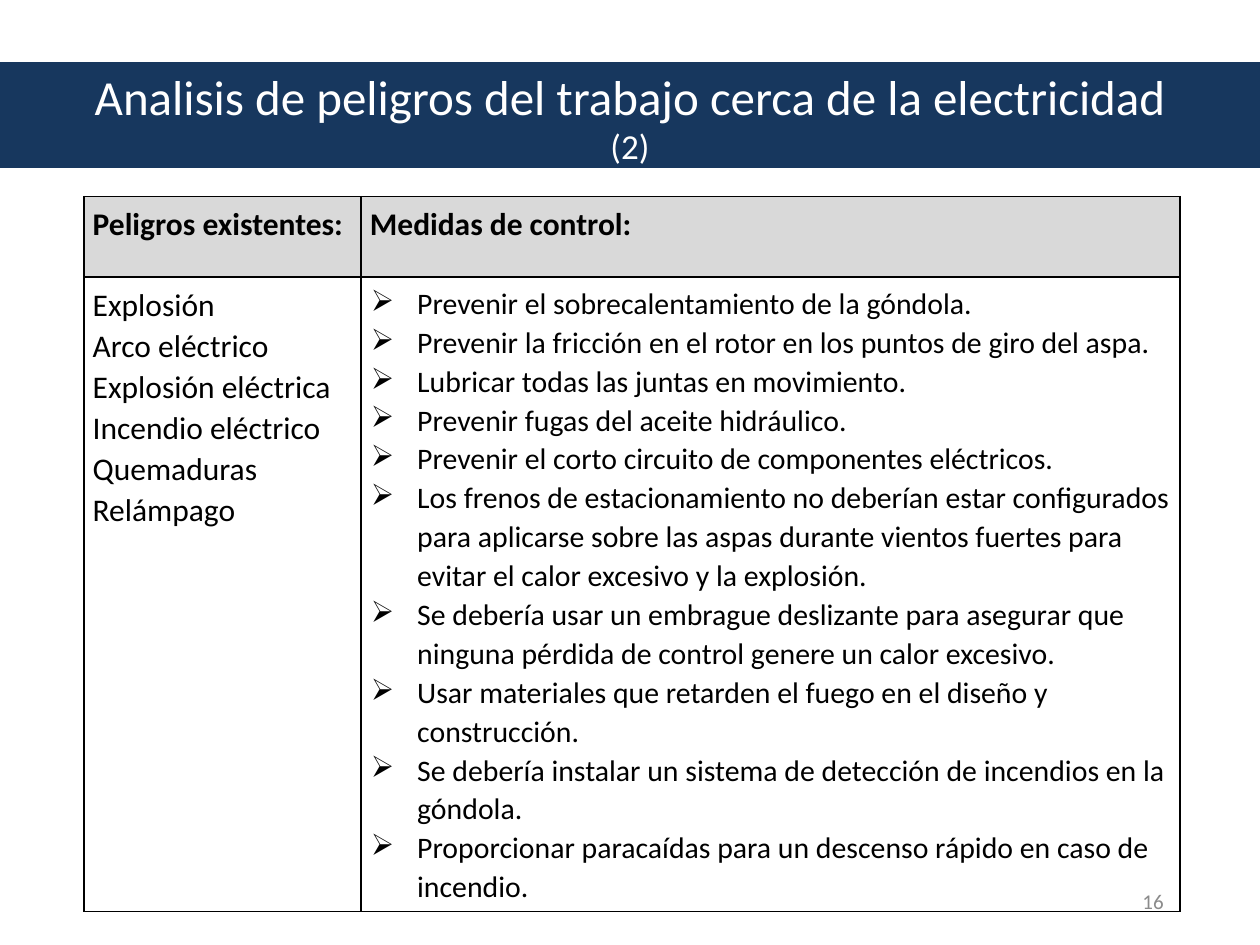
import pptx
import pptx.util
import pptx.dml.color
import pptx.enum.shapes
import pptx.enum.text
import pptx.oxml
import pptx.oxml.ns

Pt = pptx.util.Pt
ALIGN = pptx.enum.text.PP_ALIGN
COLORS = {"navy": "17375E", "white": "FFFFFF", "black": "000000", "header": "D9D9D9", "number": "8B8B8B"}
HAZARDS = ["Explosión", "Arco eléctrico", "Explosión eléctrica", "Incendio eléctrico", "Quemaduras", "Relámpago"]
CONTROLS = [
    "Prevenir el sobrecalentamiento de la góndola.",
    "Prevenir la fricción en el rotor en los puntos de giro del aspa.",
    "Lubricar todas las juntas en movimiento.",
    "Prevenir fugas del aceite hidráulico.",
    "Prevenir el corto circuito de componentes eléctricos.",
    "Los frenos de estacionamiento no deberían estar configurados para aplicarse sobre las aspas "
    "durante vientos fuertes para evitar el calor excesivo y la explosión.",
    "Se debería usar un embrague deslizante para asegurar que ninguna pérdida de control genere un calor excesivo.",
    "Usar materiales que retarden el fuego en el diseño y construcción.",
    "Se debería instalar un sistema de detección de incendios en la góndola.",
    "Proporcionar paracaídas para un descenso rápido en caso de incendio.",
]


class SlideBuilder:
    """Draw styled elements on one slide, with lengths in points."""

    def __init__(self, s, font="Calibri"):
        self.s = s
        self.font = font

    def rgb(self, color):
        return pptx.dml.color.RGBColor.from_string(COLORS[color])

    def style(self, r, size, color="black", bold=False):
        r.font.name = self.font
        r.font.size = Pt(size)
        r.font.bold = bold
        r.font.color.rgb = self.rgb(color)

    def xml(self, tag, body="", attrs=""):
        ns = pptx.oxml.ns.nsdecls("a")
        return pptx.oxml.parse_xml(f"<a:{tag} {ns} {attrs}>{body}</a:{tag}>")

    def band(self, x, y, w, h, color):
        sp = self.s.shapes.add_shape(pptx.enum.shapes.MSO_SHAPE.RECTANGLE, Pt(x), Pt(y), Pt(w), Pt(h))
        sp.shadow.inherit = False
        sp.fill.solid()
        sp.fill.fore_color.rgb = self.rgb(color)
        sp.line.color.rgb = self.rgb(color)
        sp.line.width = Pt(0.75)

    def text(self, x, y, w, h, parts, color, align):
        tf = self.s.shapes.add_textbox(Pt(x), Pt(y), Pt(w), Pt(h)).text_frame
        tf.word_wrap = True
        tf.vertical_anchor = pptx.enum.text.MSO_ANCHOR.MIDDLE
        p = tf.paragraphs[0]
        p.alignment = align
        for words, size in parts:
            r = p.add_run()
            r.text = words
            self.style(r, size, color)

    def bullet(self, p):
        pPr = p._p.get_or_add_pPr()
        pPr.set("marL", str(Pt(27)))
        pPr.set("indent", str(-Pt(26.5)))
        pPr.append(self.xml("buClr", f'<a:srgbClr val="{COLORS["black"]}"/>'))
        pPr.append(self.xml("buChar", attrs='char="➢"'))

    def cell(self, cell, lines, size, fill=None, bold=False, bullets=False):
        cell.margin_left = cell.margin_right = Pt(5)
        cell.margin_top = cell.margin_bottom = Pt(3.6)
        cell.text_frame.text = "\n".join(lines)
        for p in cell.text_frame.paragraphs:
            p.line_spacing = 1.07
            self.style(p.runs[0], size, bold=bold)
            if bullets:
                self.bullet(p)
        if fill:
            cell.fill.solid()
            cell.fill.fore_color.rgb = self.rgb(fill)
        else:
            cell.fill.background()
        line = f'<a:solidFill><a:srgbClr val="{COLORS["black"]}"/></a:solidFill>'
        tcPr = cell._tc.get_or_add_tcPr()
        for i, side in enumerate(("lnL", "lnR", "lnT", "lnB")):
            tcPr.insert(i, self.xml(side, line, f'w="{Pt(0.96)}"'))

    def table(self, x, y, widths, heights):
        frame = self.s.shapes.add_table(
            len(heights), len(widths), Pt(x), Pt(y), Pt(sum(widths)), Pt(sum(heights)))
        for col, w in zip(frame.table.columns, widths):
            col.width = Pt(w)
        for row, h in zip(frame.table.rows, heights):
            row.height = Pt(h)
        return frame.table


def main():
    prs = pptx.Presentation()
    prs.slide_width, prs.slide_height = Pt(720), Pt(540)
    b = SlideBuilder(prs.slides.add_slide(prs.slide_layouts[6]))
    b.band(0, 36, 720, 59.76, "navy")
    title = [("Analisis de peligros del trabajo cerca de la electricidad ", 28), ("(2)", 20)]
    b.text(36, 21.6, 648, 90, title, "white", ALIGN.CENTER)
    table = b.table(48, 112.4, [158.4, 468], [46, 362.5])
    b.cell(table.cell(0, 0), ["Peligros existentes:"], 18, "header", bold=True)
    b.cell(table.cell(0, 1), ["Medidas de control:"], 18, "header", bold=True)
    b.cell(table.cell(1, 0), HAZARDS, 18)
    b.cell(table.cell(1, 1), CONTROLS, 17, bullets=True)
    b.text(504, 500.4, 168, 28.8, [("16", 12)], "number", ALIGN.RIGHT)
    prs.save("out.pptx")


if __name__ == "__main__":
    main()
